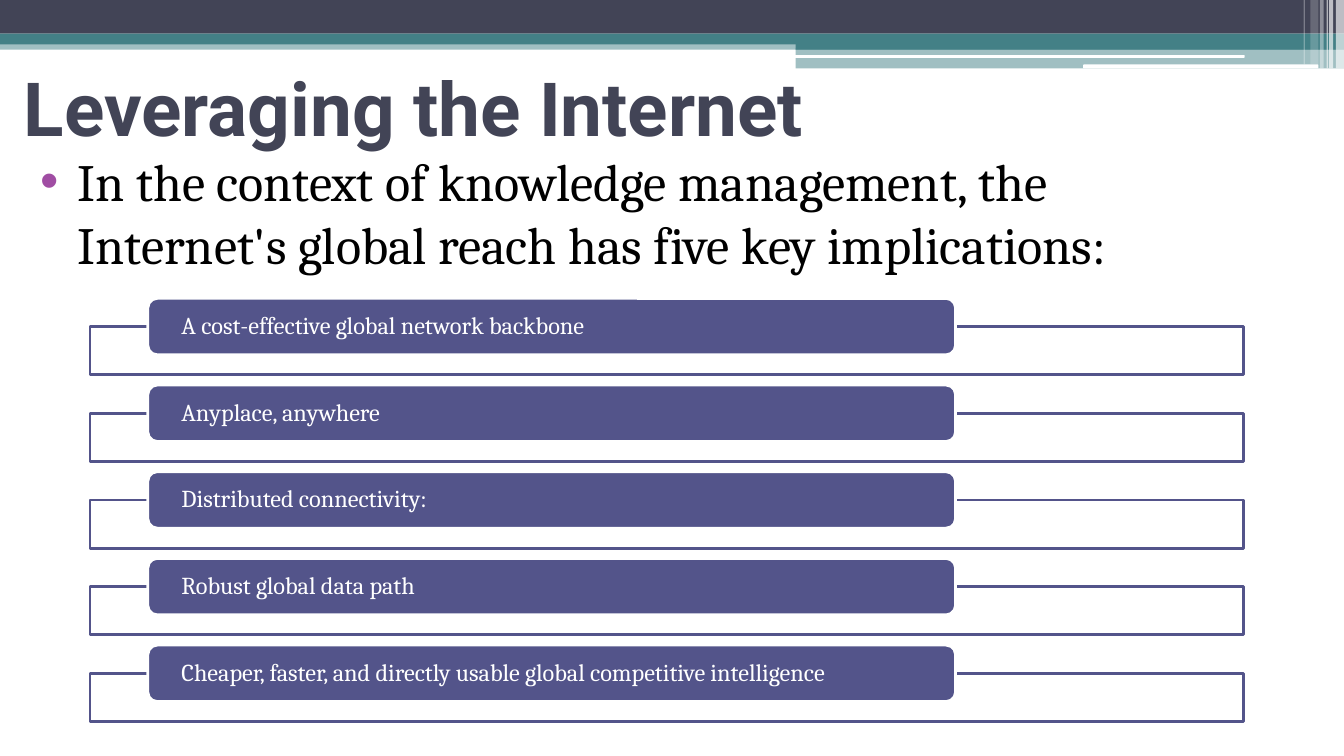
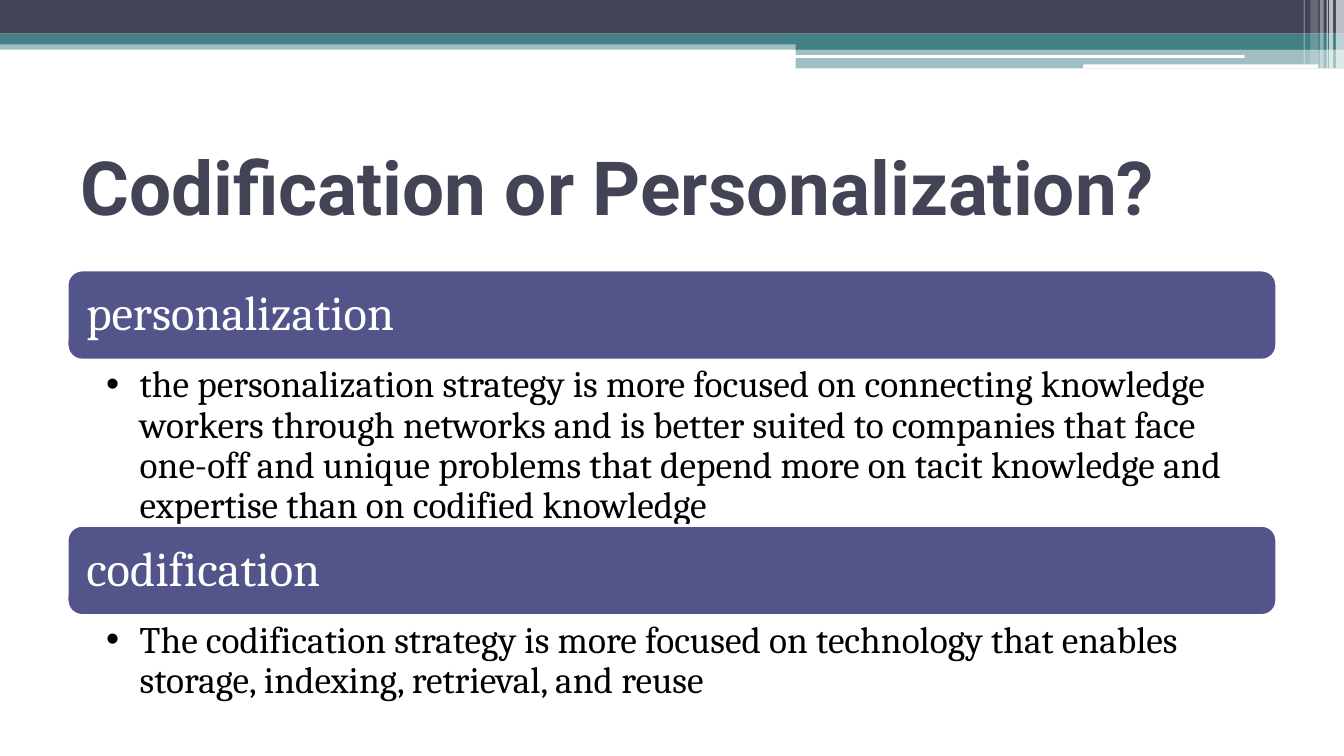
"""Build two slides on Internet reach and knowledge management strategies."""
from dataclasses import dataclass

from lxml.etree import SubElement
from pptx import Presentation
from pptx.dml.color import RGBColor
from pptx.enum.shapes import MSO_SHAPE as Shape
from pptx.enum.text import MSO_ANCHOR as Anchor, PP_ALIGN as Align
from pptx.oxml.ns import qn
from pptx.util import Inches, Pt


@dataclass(frozen=True)
class Theme:
    ink: str = "424456"
    teal: str = "438086"
    violet: str = "53548A"
    bullet: str = "A04DA3"
    white: str = "FFFFFF"
    black: str = "000000"
    heading_font: str = "Roboto"
    body_font: str = "Cambria"
    title_size: float = 40
    intro_size: float = 28
    strategy_size: float = 26
    detail_size: float = 20
    implication_size: float = 13
    outline: float = 1.5
    tight: float = 0.9


THEME = Theme()
SLIDE_WIDTH = 10
SLIDE_HEIGHT = SLIDE_WIDTH * 9 / 16

REACH_TITLE = "Leveraging the Internet"
REACH_INTRO = ("In the context of knowledge management, the Internet's global "
               "reach has five key implications:")
IMPLICATIONS = [
    "A cost-effective global network backbone",
    "Anyplace, anywhere",
    "Distributed connectivity:",
    "Robust global data path",
    "Cheaper, faster, and directly usable global competitive intelligence",
]
STRATEGY_TITLE = "Codification or Personalization?"
STRATEGIES = [
    ("personalization",
     "the personalization strategy is more focused on connecting knowledge "
     "workers through networks and is better suited to companies that face "
     "one-off and unique problems that depend more on tacit knowledge and "
     "expertise than on codified knowledge", 1.23),
    ("codification",
     "The codification strategy is more focused on technology that enables "
     "storage, indexing, retrieval, and reuse", 0.65),
]

BANDS = [
    ((0, 0.3, SLIDE_WIDTH, 0.07), THEME.teal, 50),
    ((0, 0, SLIDE_WIDTH, 0.25), THEME.ink, 100),
    ((0, 0.25, SLIDE_WIDTH, 0.08), THEME.teal, 100),
    ((5.92, 0.3, 4.08, 0.07), THEME.teal, 100),
    ((5.92, 0.36, 4.08, 0.15), THEME.teal, 50),
]
STREAKS = [(5.91, 0.41, 3.35, 0.02), (8.06, 0.48, 1.75, 0.03)]
STRIPES = [
    (9.94, 0.06, 0.51, 65),
    (9.89, 0.03, 0.51, 65),
    (9.87, 0.01, 0.51, 60),
    (9.82, 0.03, 0.51, 40),
    (9.75, 0.06, 0.48, 20),
    (9.7, 0.01, 0.48, 30),
]


def assign(target, values):
    for key, value in values.items():
        setattr(target, key, value)


def add_block(slide, box, color, opacity=100, outline=None, kind=Shape.RECTANGLE):
    block = slide.shapes.add_shape(kind, *map(Inches, box))
    block.shadow.inherit = False
    block.fill.solid()
    block.fill.fore_color.rgb = RGBColor.from_string(color)
    if opacity < 100:
        tint = block.fill._xPr.find(qn("a:solidFill"))[0]
        SubElement(tint, qn("a:alpha"), val=str(opacity * 1000))
    if outline:
        block.line.color.rgb = RGBColor.from_string(outline)
        block.line.width = Pt(THEME.outline)
    else:
        block.line.fill.background()
    return block


def write(holder, words, size, color, font=THEME.body_font, bold=False,
          insets=(0.1, 0.05, 0.1, 0.05), anchor=Anchor.MIDDLE, spacing=None,
          indent=None, bullet_color=None):
    frame = holder.text_frame
    sides = ("margin_left", "margin_top", "margin_right", "margin_bottom")
    assign(frame, {"word_wrap": True, "vertical_anchor": anchor,
                   **dict(zip(sides, map(Inches, insets)))})
    paragraph = frame.paragraphs[0]
    paragraph.text = words
    assign(paragraph, {"alignment": Align.LEFT, "line_spacing": spacing})
    if indent:
        props = paragraph._p.get_or_add_pPr()
        left, hang = indent
        props.set("marL", str(Inches(left)))
        props.set("indent", str(Inches(-hang)))
        tint = SubElement(props, qn("a:buClr"))
        SubElement(tint, qn("a:srgbClr"), val=bullet_color or color)
        SubElement(props, qn("a:buFont"), typeface="Arial")
        SubElement(props, qn("a:buChar"), char="•")
    run_font = paragraph.runs[0].font
    assign(run_font, {"name": font, "size": Pt(size), "bold": bold})
    run_font.color.rgb = RGBColor.from_string(color)


def add_text(slide, box, words, size, color, **style):
    write(slide.shapes.add_textbox(*map(Inches, box)), words, size, color, **style)


def add_pill(slide, box, words, size, insets):
    pill = add_block(slide, box, THEME.violet, outline=THEME.white,
                     kind=Shape.ROUNDED_RECTANGLE)
    write(pill, words, size, THEME.white, insets=insets, spacing=THEME.tight)


def start_slide(deck, title, left, top):
    slide = deck.slides.add_slide(deck.slide_layouts[6])
    for box, color, opacity in BANDS:
        add_block(slide, box, color, opacity)
    for box in STREAKS:
        add_block(slide, box, THEME.white, kind=Shape.ROUNDED_RECTANGLE)
    for x, width, height, opacity in STRIPES:
        add_block(slide, (x, 0, width, height), THEME.white, opacity)
    add_text(slide, (left, top, 9, 0.88), title, THEME.title_size, THEME.ink,
             font=THEME.heading_font, bold=True)
    return slide


def build_reach(deck):
    slide = start_slide(deck, REACH_TITLE, 0.08, 0.35)
    add_text(slide, (0.08, 1.06, 9, 1.13), REACH_INTRO, THEME.intro_size,
             THEME.black, anchor=Anchor.TOP, indent=(0.4, 0.28),
             bullet_color=THEME.bullet)
    first, last = 2.22, 4.8
    pitch = (last - first) / (len(IMPLICATIONS) - 1)
    for row, implication in enumerate(IMPLICATIONS):
        top = first + row * pitch
        add_block(slide, (0.67, top + 0.21, 8.58, 0.36), THEME.white, 90,
                  outline=THEME.violet)
        add_pill(slide, (1.1, top, 6.01, 0.42), implication,
                 THEME.implication_size, (0.23, 0, 0.23, 0))


def build_strategies(deck):
    slide = start_slide(deck, STRATEGY_TITLE, 0.5, 0.94)
    left, top, width, pill_height = 0.5, 2.01, 9, 0.67
    for strategy, detail, detail_height in STRATEGIES:
        add_pill(slide, (left, top, width, pill_height), strategy,
                 THEME.strategy_size, (0.11,) * 4)
        top += pill_height
        add_text(slide, (left, top, width, detail_height), detail,
                 THEME.detail_size, THEME.black, anchor=Anchor.TOP,
                 insets=(0.29, 0.04, 0.2, 0.04), spacing=THEME.tight,
                 indent=(0.25, 0.25))
        top += detail_height


def main():
    deck = Presentation()
    assign(deck, {"slide_width": Inches(SLIDE_WIDTH),
                  "slide_height": Inches(SLIDE_HEIGHT)})
    build_reach(deck)
    build_strategies(deck)
    deck.save("out.pptx")


if __name__ == "__main__":
    main()
